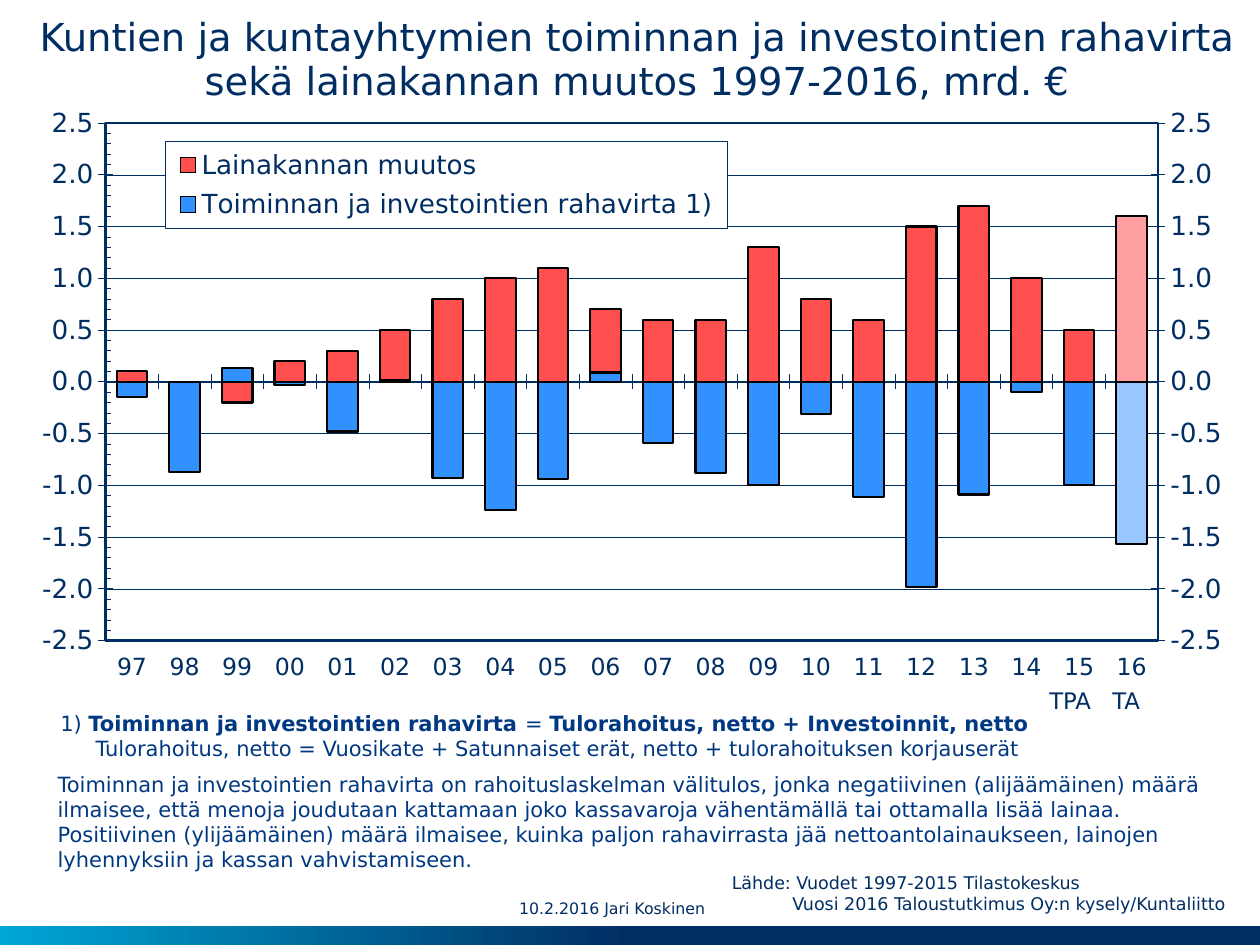
import copy
import lxml.etree
import pptx
import pptx.chart.axis
import pptx.chart.data
import pptx.dml.color
import pptx.enum.chart
import pptx.enum.dml
import pptx.enum.shapes
import pptx.enum.text
import pptx.oxml
import pptx.oxml.ns
import pptx.util

Inches, Pt = pptx.util.Inches, pptx.util.Pt
qn = pptx.oxml.ns.qn
Tick = pptx.enum.chart.XL_TICK_MARK
FONT, NAVY, BLUE = "DejaVu Sans", "002E63", "003882"

TITLE = ["Kuntien ja kuntayhtymien toiminnan ja investointien rahavirta",
         "sekä lainakannan muutos 1997-2016, mrd. €"]
YEARS = ["97", "98", "99", "00", "01", "02", "03", "04", "05", "06",
         "07", "08", "09", "10", "11", "12", "13", "14", "15", "16"]
SERIES = [
    ("Lainakannan muutos", "FF4F4F", "FF9F9F",
     [0.1, 0, -0.2, 0.2, 0.3, 0.5, 0.8, 1, 1.1, 0.7,
      0.6, 0.6, 1.3, 0.8, 0.6, 1.5, 1.7, 1, 0.5, 1.6]),
    ("Toiminnan ja investointien rahavirta 1)", "3191FF", "98C8FF",
     [-0.15, -0.87, 0.13, -0.03, -0.48, 0.02, -0.93, -1.24, -0.94, 0.09,
      -0.59, -0.88, -1, -0.31, -1.11, -1.98, -1.09, -0.1, -1, -1.57]),
]
PLOT = {"x": 0.06, "y": 0.03, "w": 0.88, "h": 0.84}
KEY = {"x": 0.11, "y": 0.06, "w": 0.47, "h": 0.14}
BODY = ("Toiminnan ja investointien rahavirta on rahoituslaskelman välitulos, "
        "jonka negatiivinen (alijäämäinen) määrä ilmaisee, että menoja joudutaan "
        "kattamaan joko kassavaroja vähentämällä tai ottamalla lisää lainaa. "
        "Positiivinen (ylijäämäinen) määrä ilmaisee, kuinka paljon rahavirrasta "
        "jää nettoantolainaukseen, lainojen lyhennyksiin ja kassan vahvistamiseen.")
NOTE = [("1) ", False), ("Toiminnan ja investointien rahavirta ", True), ("= ", False),
        ("Tulorahoitus, netto + Investoinnit, netto", True)]
NOTE2 = "Tulorahoitus, netto = Vuosikate + Satunnaiset erät, netto + tulorahoituksen korjauserät"
SOURCE = ["Lähde: Vuodet 1997-2015 Tilastokeskus",
          "Vuosi 2016 Taloustutkimus Oy:n kysely/Kuntaliitto"]
TEXTS = [
    ((4.12, 7.06, 2.29, 0.29), 9, NAVY, True, [(0, [("10.2.2016 Jari Koskinen", False)])]),
    ((0.36, 6.07, 9.53, 0.91), 12, BLUE, True, [(0, [(BODY, False)])]),
    ((0.31, 5.56, 9.25, 0.54), 12, BLUE, True, [(0.07, NOTE), (0.35, [(NOTE2, False)])]),
    ((8.73, 5.4, 0.43, 0.32), 13, NAVY, False, [(0, [("TA", False)])]),
    ((8.23, 5.4, 0.54, 0.32), 13, NAVY, False, [(0, [("TPA", False)])]),
    ((5.71, 6.87, 4.33, 0.44), 10, NAVY, True,
     [(0, [(SOURCE[0], False)]), (0.48, [(SOURCE[1], False)])]),
]


def rgb(code):
    return pptx.dml.color.RGBColor.from_string(code)


def style(font, size, code=NAVY, bold=False, name=FONT):
    font.name, font.size, font.bold = name, Pt(size), bold
    font.color.rgb = rgb(code)


def stroke(line, code, width):
    line.color.rgb, line.width = rgb(code), Pt(width)


def layout(box, inner=False):
    root = lxml.etree.Element(qn("c:layout"))
    man = lxml.etree.SubElement(root, qn("c:manualLayout"))
    pairs = [("layoutTarget", "inner")] if inner else []
    pairs += [("xMode", "edge"), ("yMode", "edge"), *box.items()]
    for tag, val in pairs:
        lxml.etree.SubElement(man, qn("c:" + tag)).set("val", str(val))
    return root


def framed(width, fill=""):
    paint = f'<a:solidFill><a:srgbClr val="{fill}"/></a:solidFill>' if fill else "<a:noFill/>"
    return pptx.oxml.parse_xml(
        f'<c:spPr {pptx.oxml.ns.nsdecls("c", "a")}>{paint}<a:ln w="{Pt(width)}">'
        f'<a:solidFill><a:srgbClr val="{NAVY}"/></a:solidFill></a:ln></c:spPr>')


def add_title(slide):
    title = slide.shapes.title
    title.left, title.top, title.width, title.height = map(Inches, (0.27, 0.13, 9.57, 0.7))
    frame = title.text_frame
    frame.text = "\n".join(TITLE)
    frame.auto_size = pptx.enum.text.MSO_AUTO_SIZE.NONE
    frame.vertical_anchor = pptx.enum.text.MSO_ANCHOR.TOP
    frame.margin_left = frame.margin_right = frame.margin_top = frame.margin_bottom = 0
    for para in frame.paragraphs:
        para.alignment = pptx.enum.text.PP_ALIGN.CENTER
        para.line_spacing, para.space_before = 0.95, Pt(0)
        style(para.runs[0].font, 22)


def add_text(slide, box, size, code, wrap, lines):
    frame = slide.shapes.add_textbox(*map(Inches, box)).text_frame
    frame.word_wrap = wrap
    if size == 9:
        frame.margin_left = frame.margin_right = frame.margin_top = frame.margin_bottom = 0
        frame.vertical_anchor = pptx.enum.text.MSO_ANCHOR.MIDDLE
    if lines[0][1] is NOTE:
        frame.margin_top = Inches(0.08)
    for i, (indent, parts) in enumerate(lines):
        para = frame.add_paragraph() if i else frame.paragraphs[0]
        if indent:
            para._p.get_or_add_pPr().set("marL", str(Inches(indent)))
        for text, bold in parts:
            run = para.add_run()
            run.text = text
            style(run.font, size, code, bold)


def split_axes(plot):
    left = plot.find(qn("c:barChart"))
    right = copy.deepcopy(left)
    left.remove(left.findall(qn("c:ser"))[1])
    right.remove(right.findall(qn("c:ser"))[0])
    left.addnext(right)
    cat, val = plot.find(qn("c:catAx")), plot.find(qn("c:valAx"))
    cat2, val2 = copy.deepcopy(cat), copy.deepcopy(val)
    val.addnext(val2)
    val2.addnext(cat2)
    for node, own, other in ((cat2, "501", "502"), (val2, "502", "501")):
        node.find(qn("c:axId")).set("val", own)
        node.find(qn("c:crossAx")).set("val", other)
    for node, num in zip(right.findall(qn("c:axId")), ("501", "502")):
        node.set("val", num)
    val2.find(qn("c:axPos")).set("val", "r")
    val2.find(qn("c:crosses")).set("val", "max")
    pptx.chart.axis.CategoryAxis(cat2).visible = False
    axis = pptx.chart.axis.ValueAxis(val2)
    axis.has_major_gridlines = False
    axis.minor_tick_mark = Tick.NONE


def add_chart(slide):
    data = pptx.chart.data.CategoryChartData(number_format="0.0")
    data.categories = YEARS
    for name, _, _, vals in SERIES:
        data.add_series(name, vals)
    kind = pptx.enum.chart.XL_CHART_TYPE.COLUMN_CLUSTERED
    chart = slide.shapes.add_chart(kind, *map(Inches, (0.27, 0.83, 9.49, 4.89)), data).chart
    chart.has_title = False
    style(chart.font, 21.9, NAVY, True, "Times New Roman")
    bars = chart.plots[0]
    bars.gap_width, bars.vary_by_categories = 72, False
    for ser, (_, code, pale, _) in zip(bars.series, SERIES):
        ser.invert_if_negative = False
        for item, tint in ((ser, code), (ser.points[len(YEARS) - 1], pale)):
            item.format.fill.solid()
            item.format.fill.fore_color.rgb = rgb(tint)
            stroke(item.format.line, "000000", 1.25)
    cat, val = chart.category_axis, chart.value_axis
    for axis, size in ((cat, 13.5), (val, 15)):
        style(axis.tick_labels.font, size)
        stroke(axis.format.line, NAVY, 0.3)
        axis.major_tick_mark = Tick.CROSS
    cat.tick_label_position = pptx.enum.chart.XL_TICK_LABEL_POSITION.LOW
    val.minimum_scale, val.maximum_scale = -2.5, 2.5
    val.major_unit, val.minor_unit = 0.5, 0.1
    val.minor_tick_mark = Tick.INSIDE
    val.tick_labels.number_format = "0.0"
    val.tick_labels.number_format_is_linked = False
    grid = val.major_gridlines.format.line
    stroke(grid, NAVY, 0.25)
    grid.dash_style = pptx.enum.dml.MSO_LINE.ROUND_DOT

    area = chart._chartSpace.chart.plotArea
    split_axes(area)
    for old in area.findall(qn("c:layout")):
        area.remove(old)
    area.insert(0, layout(PLOT, True))
    area.append(framed(1.5))
    chart.has_legend = True
    legend = chart.legend
    legend.position = pptx.enum.chart.XL_LEGEND_POSITION.RIGHT
    legend.include_in_layout = False
    style(legend.font, 15)
    root = legend._element
    for old in root.findall(qn("c:layout")):
        root.remove(old)
    root.get_or_add_legendPos().addnext(layout(KEY))
    root.find(qn("c:txPr")).addprevious(framed(0.25, "FFFFFF"))


def add_band(slide):
    kind = pptx.enum.shapes.MSO_SHAPE.RECTANGLE
    band = slide.shapes.add_shape(kind, *map(Inches, (0, 7.35, 10, 0.15)))
    band.shadow.inherit = False
    band.line.fill.background()
    band.fill.gradient()
    band.fill.gradient_angle = 180
    for stop, (code, spot) in zip(band.fill.gradient_stops, ((NAVY, 0.5), ("00A6D6", 1))):
        stop.color.rgb, stop.position = rgb(code), spot


def main():
    deck = pptx.Presentation()
    deck.slide_width, deck.slide_height = Inches(10), Inches(7.5)
    slide = deck.slides.add_slide(deck.slide_layouts[5])
    add_band(slide)
    add_chart(slide)
    add_title(slide)
    for item in TEXTS:
        add_text(slide, *item)
    deck.save("out.pptx")


if __name__ == "__main__":
    main()
